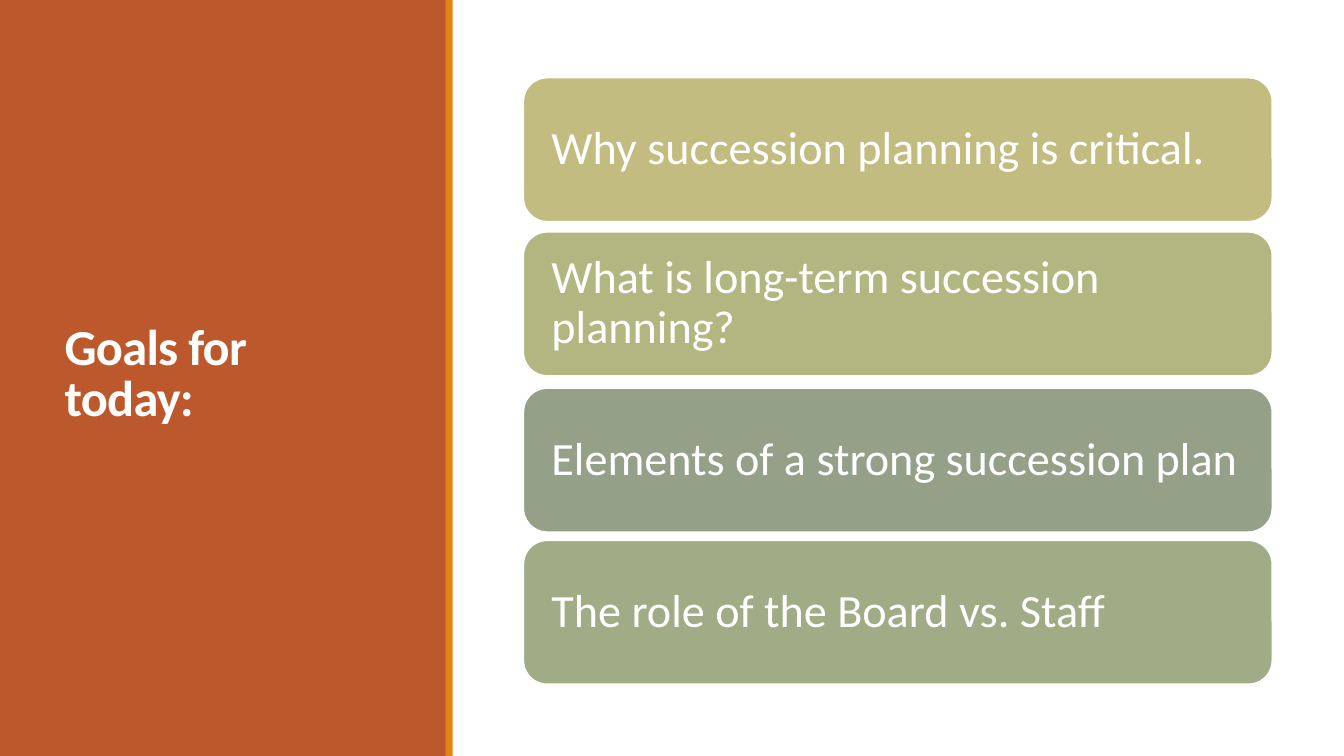
from pptx import Presentation
from pptx.dml.color import RGBColor as Rgb
from pptx.enum.shapes import MSO_SHAPE as Kind
from pptx.enum.text import MSO_ANCHOR as Anchor, MSO_AUTO_SIZE as Fit, PP_ALIGN as Align
from pptx.util import Pt

PX = 9144
HUES = {
    "white": "FFFFFF", "rust": "BD582C", "gold": "E48312",
    "sand": "C2BC80", "moss": "B2B782", "sage": "94A088", "fern": "A0AC85",
}
GOALS = [
    (77, "sand", "Why succession planning is critical."),
    (230, "moss", "What is long-term succession planning?"),
    (385, "sage", "Elements of a strong succession plan"),
    (536, "fern", "The role of the Board vs. Staff"),
]


def hue(name):
    """Return the named colour."""
    return Rgb.from_string(HUES[name])


def put(item, values):
    """Set each attribute of an item from a dict."""
    for key, value in values.items():
        setattr(item, key, value)


def block(slide, kind, box, fill):
    """Add a plain filled shape."""
    shape = slide.shapes.add_shape(kind, *[n * PX for n in box])
    shape.shadow.inherit = False
    shape.fill.solid()
    shape.fill.fore_color.rgb = hue(fill)
    shape.line.fill.background()
    return shape


def write(shape, text, size, bold, space, pad, right):
    """Write white, left-aligned, vertically centred text."""
    frame = shape.text_frame
    put(frame, {
        "word_wrap": True, "auto_size": Fit.NONE, "vertical_anchor": Anchor.MIDDLE,
        "margin_left": pad * PX, "margin_right": right * PX,
        "margin_top": pad * PX, "margin_bottom": pad * PX,
    })
    line = frame.paragraphs[0]
    put(line, {"alignment": Align.LEFT, "line_spacing": space})
    run = line.add_run()
    run.text = text
    put(run.font, {"name": "Calibri", "size": Pt(size), "bold": bold})
    run.font.color.rgb = hue("white")
    return run


def head(slide, text):
    """Place the title over the side panel."""
    title = slide.shapes.title
    put(title, {"left": 54 * PX, "top": 57 * PX, "width": 337 * PX, "height": 631 * PX})
    run = write(title, text, 36, True, 0.85, 10, 20)
    run.font._element.set("spc", "-50")
    title.element.getparent().append(title.element)


def card(slide, top, fill, text):
    """Add one rounded goal card."""
    shape = block(slide, Kind.ROUNDED_RECTANGLE, (519, top, 743, 143), fill)
    shape.line.color.rgb = hue("white")
    shape.line.width = Pt(1.25)
    write(shape, text, 33, False, 0.9, 21, 21)


def main():
    """Build the goals slide."""
    deck = Presentation()
    put(deck, {"slide_width": 1333 * PX, "slide_height": 750 * PX})
    slide = deck.slides.add_slide(deck.slide_layouts[5])
    block(slide, Kind.RECTANGLE, (0, 0, 443, 750), "rust")
    head(slide, "Goals for today:")
    block(slide, Kind.RECTANGLE, (442, 0, 7, 750), "gold")
    for goal in GOALS:
        card(slide, *goal)
    deck.save("out.pptx")


if __name__ == "__main__":
    main()
